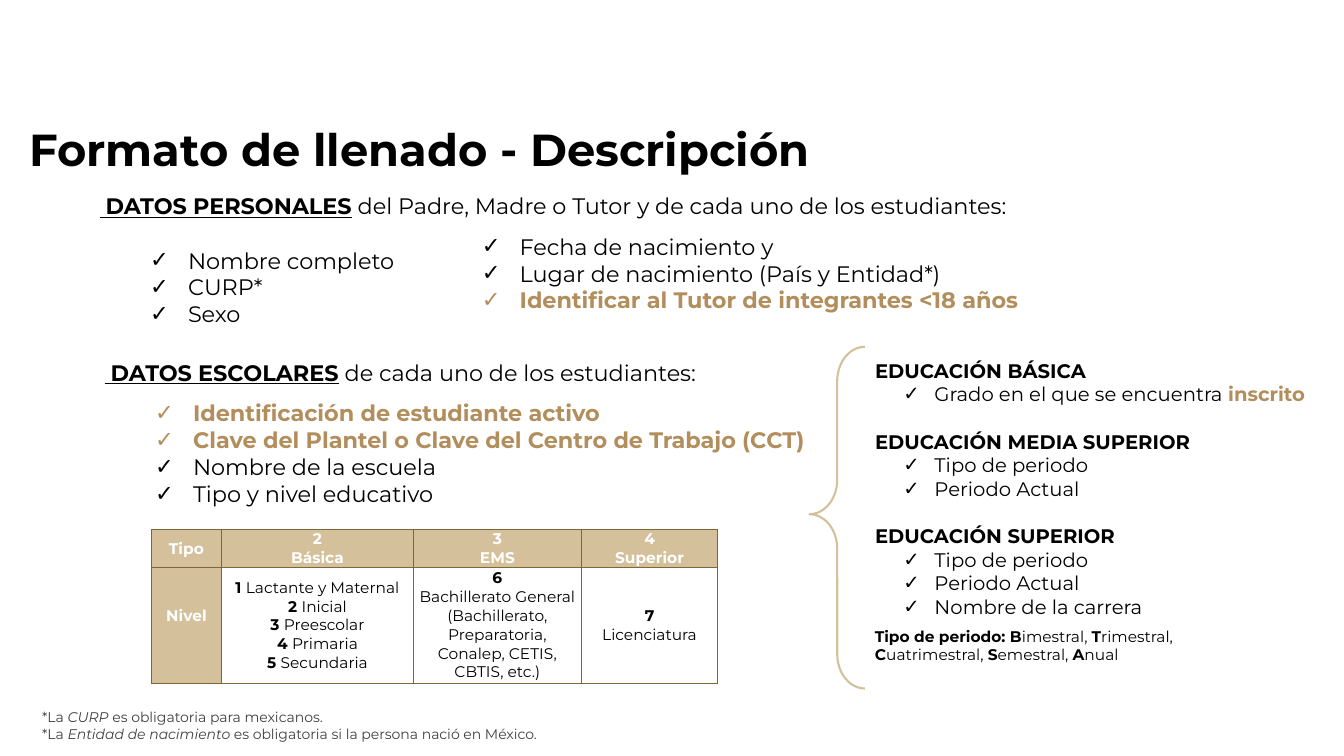
from dataclasses import dataclass
from typing import Optional

from lxml.etree import SubElement
from pptx import Presentation
from pptx.dml.color import RGBColor
from pptx.enum.shapes import MSO_SHAPE as Shape
from pptx.enum.text import MSO_ANCHOR as Anchor, MSO_AUTO_SIZE as AutoSize, PP_ALIGN as Align
from pptx.oxml.ns import qn
from pptx.util import Pt

FONT = "Montserrat"
BLACK, WHITE, GRAY = "000000", "FFFFFF", "404040"
GOLD, SAND, BORDER = "B38E5D", "D4C19C", "806637"


@dataclass(frozen=True)
class Span:
    text: str
    bold: bool = False
    italic: bool = False
    underline: bool = False
    color: Optional[str] = None


@dataclass(frozen=True)
class Line:
    spans: tuple[Span, ...]
    bullet: bool = False
    gap: float = 0


@dataclass(frozen=True)
class Block:
    """Text area; indent and hang place its bullets."""
    box: tuple[float, float, float, float]
    size: float
    lines: tuple[Line, ...]
    indent: float = 0
    hang: float = 0
    color: str = BLACK


def rgb(color: str) -> RGBColor:
    return RGBColor.from_string(color)


def write(paragraph, text: str, *, size: float, color: str = BLACK, bold: bool = False,
          italic: bool = False, underline: bool = False) -> None:
    run = paragraph.add_run()
    run.text = text
    font = run.font
    font.name, font.size = FONT, Pt(size)
    font.bold, font.italic, font.underline = bold, italic, underline
    font.color.rgb = rgb(color)


def write_spans(paragraph, spans: tuple[Span, ...], size: float, color: str) -> None:
    for span in spans:
        write(paragraph, span.text, size=size, color=span.color or color, bold=span.bold,
              italic=span.italic, underline=span.underline)


def place(shape, box: tuple[float, float, float, float]) -> None:
    shape.left, shape.top, shape.width, shape.height = map(Pt, box)


def set_bullet(paragraph, indent: float, hang: float) -> None:
    properties = paragraph._p.get_or_add_pPr()
    properties.set("marL", str(Pt(indent)))
    properties.set("indent", str(-Pt(hang)))
    if hang:
        SubElement(properties, qn("a:buChar")).set("char", "✓")
    else:
        SubElement(properties, qn("a:buNone"))


def fill_block(shape, block: Block) -> None:
    place(shape, block.box)
    frame = shape.text_frame
    frame.word_wrap, frame.auto_size = True, AutoSize.NONE
    frame.vertical_anchor = Anchor.TOP
    for index, line in enumerate(block.lines):
        paragraph = frame.add_paragraph() if index else frame.paragraphs[0]
        paragraph.alignment = Align.LEFT
        paragraph.space_before = Pt(line.gap)
        if line.bullet:
            set_bullet(paragraph, block.indent, block.hang)
        else:
            set_bullet(paragraph, 0, 0)
        write_spans(paragraph, line.spans, block.size, block.color)


def fill_cell(cell, lines: list[tuple[Span, ...]], fill: Optional[str], color: str) -> None:
    cell.margin_left = cell.margin_right = cell.margin_top = cell.margin_bottom = 0
    cell.vertical_anchor = Anchor.MIDDLE
    properties = cell._tc.get_or_add_tcPr()
    for side in ("lnL", "lnR", "lnT", "lnB"):
        edge = SubElement(properties, qn(f"a:{side}"), w=str(Pt(0.5)))
        SubElement(SubElement(edge, qn("a:solidFill")), qn("a:srgbClr"), val=BORDER)
    if fill:
        cell.fill.solid()
        cell.fill.fore_color.rgb = rgb(fill)
    else:
        cell.fill.background()
    for index, spans in enumerate(lines):
        paragraph = cell.text_frame.add_paragraph() if index else cell.text_frame.paragraphs[0]
        paragraph.alignment = Align.CENTER
        write_spans(paragraph, spans, 11, color)


def item(text: str, highlighted: bool = False) -> Line:
    return Line((Span(text, highlighted, color=GOLD if highlighted else None),), bullet=True)


def heading(text: str, gap: float = 0) -> Line:
    return Line((Span(text, True),), gap=gap)


def intro(topic: str, rest: str) -> Line:
    return Line((Span(" ", underline=True), Span(topic, True, underline=True), Span(rest)))


def level(number: str, name: str) -> tuple[Span, ...]:
    return Span(f"{number} ", True), Span(name)


PERSONAL = Block((64.1, 133.9, 753.1, 104.4), 16, (
    intro("DATOS PERSONALES", " del Padre, Madre o Tutor y de cada uno de los estudiantes:"),
    Line((Span("Nombre completo"),), bullet=True, gap=19.5),
    item("CURP*"),
    item("Sexo")), 63, 27)
BIRTH = Block((337, 162.7, 522.7, 65.5), 16, (
    item("Fecha de nacimiento y"),
    item("Lugar de nacimiento (País y Entidad*)"),
    item("Identificar al Tutor de integrantes <18 años", True)), 27, 27)
SCHOOL = Block((67.7, 252.7, 812.2, 113.8), 16, (
    intro("DATOS ESCOLARES", " de cada uno de los estudiantes:"),
    Line((Span("Identificación de estudiante activo", True, color=GOLD),), bullet=True, gap=9.75),
    item("Clave del Plantel o Clave del Centro de Trabajo (CCT)", True),
    item("Nombre de la escuela"),
    item("Tipo y nivel educativo")), 63, 27)
EDUCATION = Block((617.8, 252.7, 332.6, 193.7), 14, (
    heading("EDUCACIÓN BÁSICA"),
    Line((Span("Grado en el que se encuentra "), Span("inscrito", True, color=GOLD)), bullet=True),
    heading("EDUCACIÓN MEDIA SUPERIOR", 17),
    item("Tipo de periodo"),
    item("Periodo Actual"),
    heading("EDUCACIÓN SUPERIOR", 17),
    item("Tipo de periodo"),
    item("Periodo Actual"),
    item("Nombre de la carrera")), 42.5, 22.3)
PERIODS = Block((617.8, 444.2, 267.8, 33.8), 11, (Line((
    Span("Tipo de periodo: B", True), Span("imestral, "), Span("T", True), Span("rimestral, "),
    Span("C", True), Span("uatrimestral, "), Span("S", True), Span("emestral, "),
    Span("A", True), Span("nual"))),))
FOOTNOTES = Block((23, 502.6, 540, 31.7), 10, (
    Line((Span("*La "), Span("CURP", italic=True), Span(" es obligatoria para mexicanos."))),
    Line((Span("*La "), Span("Entidad de nacimiento ", italic=True),
          Span("es obligatoria si la persona nació en México.")))), color=GRAY)

COLUMN_WIDTHS = (50.4, 136.8, 120.2, 97.2)
ROW_HEIGHTS = (26.8, 82.8)
TYPES = (("Tipo",), ("2", "Básica"), ("3", "EMS"), ("4", "Superior"))
LEVELS = (
    [(Span("Nivel", True),)],
    [level("1", "Lactante y Maternal"), level("2", "Inicial"), level("3", "Preescolar"),
     level("4", "Primaria"), level("5", "Secundaria")],
    [(Span("6", True),),
     (Span("Bachillerato General (Bachillerato, Preparatoria, Conalep, CETIS, CBTIS, etc.)"),)],
    [(Span("7", True),), (Span("Licenciatura"),)])


def add_levels_table(slide) -> None:
    table = slide.shapes.add_table(2, 4, Pt(108), Pt(378.3), Pt(sum(COLUMN_WIDTHS)),
                                   Pt(sum(ROW_HEIGHTS))).table
    for column, width in zip(table.columns, COLUMN_WIDTHS):
        column.width = Pt(width)
    for row, height in zip(table.rows, ROW_HEIGHTS):
        row.height = Pt(height)
    for index, (type_lines, level_lines) in enumerate(zip(TYPES, LEVELS)):
        fill_cell(table.cell(0, index), [(Span(text, True),) for text in type_lines], SAND, WHITE)
        is_label = index == 0
        fill_cell(table.cell(1, index), level_lines, SAND if is_label else None,
                  WHITE if is_label else BLACK)
    table.cell(1, 0).margin_bottom = Pt(13.4)


def add_brace(slide) -> None:
    brace = slide.shapes.add_shape(Shape.LEFT_BRACE, Pt(578.2), Pt(247.7), Pt(39.6), Pt(244.1))
    brace.adjustments[0], brace.adjustments[1] = 0.62, 0.49
    brace.shadow.inherit = False
    brace.fill.background()
    brace.line.color.rgb = rgb(SAND)
    brace.line.width = Pt(1.5)


def main() -> None:
    deck = Presentation()
    deck.slide_width, deck.slide_height = Pt(960), Pt(540)
    slide = deck.slides.add_slide(deck.slide_layouts.get_by_name("Comparison"))

    title = slide.shapes.title
    fill_block(title, Block((20.9, 82.8, 802.8, 46.1), 32,
                            (heading("Formato de llenado - Descripción"),)))
    title.text_frame.margin_left = 0
    title.text_frame.vertical_anchor = Anchor.MIDDLE

    for index, block in enumerate((PERSONAL, BIRTH, SCHOOL, EDUCATION), start=1):
        fill_block(slide.placeholders[index], block)
    for block in (PERIODS, FOOTNOTES):
        fill_block(slide.shapes.add_textbox(*map(Pt, block.box)), block)
    add_levels_table(slide)
    add_brace(slide)
    deck.save("out.pptx")


if __name__ == "__main__":
    main()
